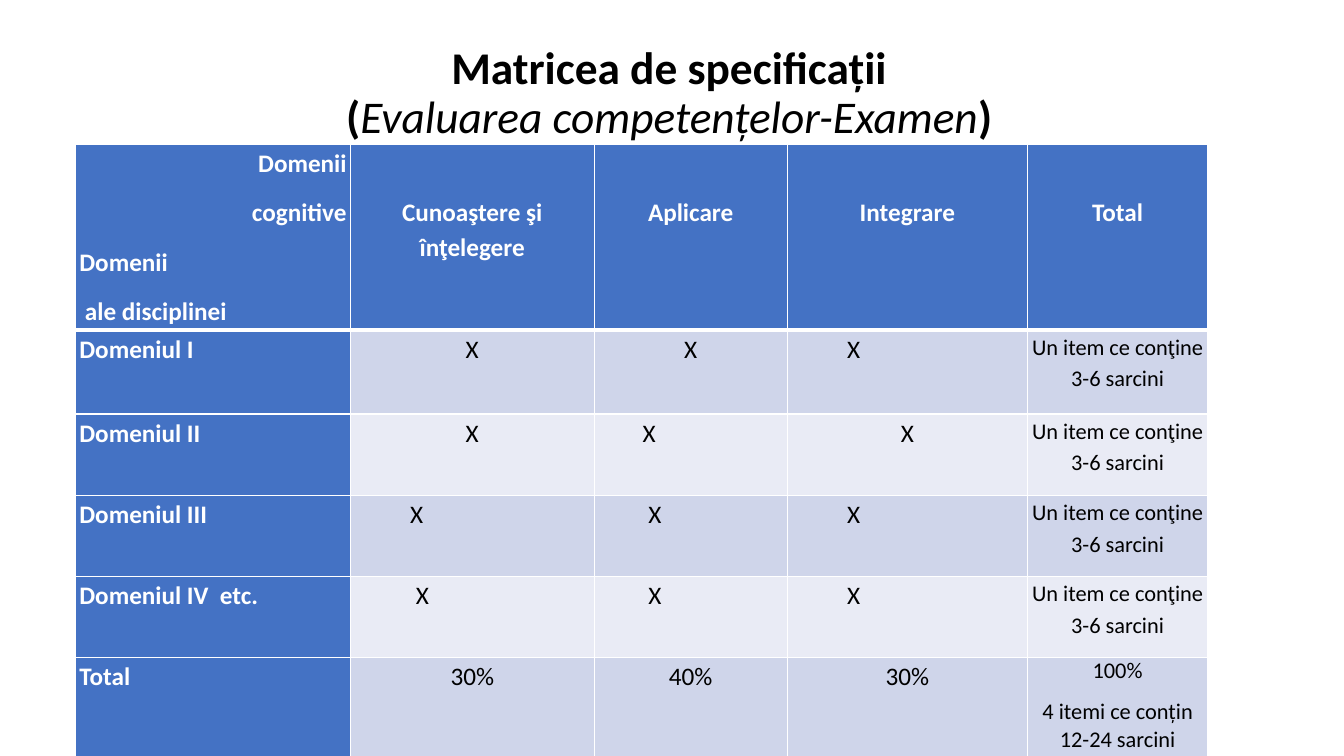
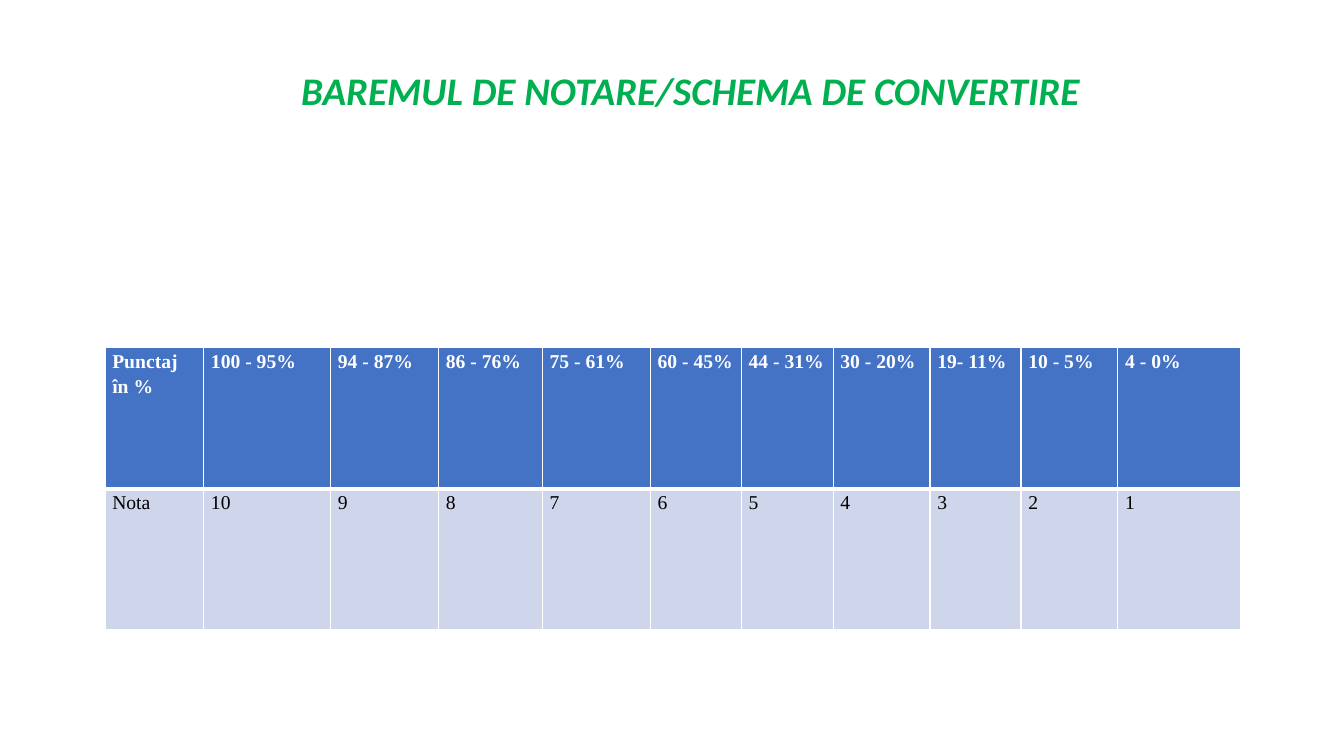
from pptx import Presentation
from pptx.dml.color import RGBColor
from pptx.enum.text import MSO_ANCHOR, MSO_AUTO_SIZE, PP_ALIGN as AL
from pptx.oxml.ns import qn
from pptx.util import Pt
from lxml.etree import SubElement

COLORS = {"head": "4472C4", "band": "CFD5EA", "light": "E9EBF5",
          "white": "FFFFFF", "black": "000000", "green": "00B050"}

prs = Presentation()
prs.slide_width, prs.slide_height = Pt(960), Pt(540)


def add_slide(box, size, color, lines):
    """Add a slide with a centred title; each run is (text, bold, italic)."""
    s = prs.slides.add_slide(prs.slide_layouts[5])
    sp = s.shapes.title
    sp.left, sp.top, sp.width, sp.height = map(Pt, box)
    tf = sp.text_frame
    tf.word_wrap = True
    tf.auto_size = MSO_AUTO_SIZE.NONE
    tf.vertical_anchor = MSO_ANCHOR.MIDDLE
    tf.margin_top = tf.margin_bottom = 0
    p = tf.paragraphs[0]
    p.alignment, p.line_spacing = AL.CENTER, 0.9
    for i, line in enumerate(lines):
        if i:
            p.add_line_break()
        for text, bold, italic in line:
            r = p.add_run()
            r.text = text
            r.font.name, r.font.size = "Calibri", Pt(size)
            r.font.bold, r.font.italic = bold, italic
            r.font.color.rgb = RGBColor.from_string(COLORS[color])
    return s


def add_grid(s, left, top, widths, heights, rows, font, margin, after):
    """Add a table; a cell is (paragraphs, size, spacing, top margin),
    a paragraph is (text, alignment, indent)."""
    table = s.shapes.add_table(len(heights), len(widths), Pt(left), Pt(top),
                               Pt(sum(widths)), Pt(sum(heights))).table
    table.horz_banding = False
    for col, width in zip(table.columns, widths):
        col.width = Pt(width)
    for i, height in enumerate(heights):
        table.rows[i].height = Pt(height)
        for j, (paras, size, spacing, above) in enumerate(rows[i]):
            cell = table.cell(i, j)
            # White borders, thicker under the header row
            for side in ("lnL", "lnR", "lnT", "lnB"):
                thick = (i, side) in ((0, "lnB"), (1, "lnT"))
                ln = SubElement(cell._tc.get_or_add_tcPr(), qn(f"a:{side}"),
                                w=str(Pt(3 if thick else 1)))
                fill = SubElement(ln, qn("a:solidFill"))
                SubElement(fill, qn("a:srgbClr"), val=COLORS["white"])
            # The header row is blue, and so is a first column in bold
            head = i == 0 or (j == 0 and len(heights) > 2)
            shade = "head" if head else "band" if i % 2 else "light"
            cell.fill.solid()
            cell.fill.fore_color.rgb = RGBColor.from_string(COLORS[shade])
            cell.margin_left = cell.margin_right = Pt(margin)
            cell.margin_top, cell.margin_bottom = Pt(above), 0
            tf = cell.text_frame
            for k, (text, align, indent) in enumerate(paras):
                p = tf.add_paragraph() if k else tf.paragraphs[0]
                p.alignment, p.line_spacing = align, spacing
                p.space_after = Pt(after)
                if indent:
                    p._p.get_or_add_pPr().set("marL", str(Pt(indent)))
                r = p.add_run()
                r.text = text
                r.font.name, r.font.size, r.font.bold = font, Pt(size), head
                r.font.color.rgb = RGBColor.from_string(
                    COLORS["white" if head else "black"])


# Slide 1: specification matrix
s = add_slide((64, 30, 828, 75), 32.4, "black", [
    [("Matricea de specificații", True, False)],
    [("(", True, False), ("Evaluarea competențelor-Examen", False, True),
     (")", True, False)]])

corner = [("Domenii", AL.RIGHT, 0), ("cognitive", AL.RIGHT, 0),
          ("Domenii", AL.LEFT, 0), ("ale disciplinei", AL.LEFT, 4)]
rows = [[(corner, 18, 1.15, 0)]]
for text in ("Cunoaştere şi înţelegere", "Aplicare", "Integrare", "Total"):
    rows[0].append(([(text, AL.CENTER, 0)], 18, 1.15, 35))

# Indent of each X; 0 means centred
marks = [("Domeniul I", 0, 0, 40), ("Domeniul II", 0, 32, 0),
         ("Domeniul III", 40, 36, 40), ("Domeniul IV  etc.", 44, 36, 40)]
for name, *indents in marks:
    row = [([(name, AL.LEFT, 0)], 18, 1.15, 0)]
    for indent in indents:
        align = AL.LEFT if indent else AL.CENTER
        row.append(([("X", align, indent)], 18, 1.15, 0))
    row.append(([("Un item ce conţine 3-6 sarcini", AL.CENTER, 0)],
                16, 1.15, 0))
    rows.append(row)

rows.append([([("Total", AL.LEFT, 0)], 18, 1.15, 0)])
for share in ("30%", "40%", "30%"):
    rows[-1].append(([(share, AL.CENTER, 0)], 18, 1.15, 0))
rows[-1].append(([("100%", AL.CENTER, 0),
                  ("4 itemi ce conțin 12-24 sarcini", AL.CENTER, 0)],
                 16, 1, 0))
add_grid(s, 54, 102.8, [196.3, 174.1, 138, 171.5, 128.9],
         [132.8, 60.2, 57.9, 57.9, 57.9, 85], rows, "Calibri", 2.7, 10)

# Slide 2: conversion of scores into marks
s = add_slide((81, 19, 824, 95), 27.9, "green",
              [[("BAREMUL DE NOTARE/SCHEMA DE CONVERTIRE", True, True)]])
scores = ["Punctaj în %", "100 - 95%", "94 - 87%", "86 - 76%", "75 - 61%",
          "60 - 45%", "44 - 31%", "30 - 20%", "19- 11%", "10 - 5%", "4 - 0%"]
grades = ["Nota"] + [str(n) for n in range(10, 0, -1)]
rows = [[([(text, AL.LEFT, 0)], 14, 1.15, 0) for text in line]
        for line in (scores, grades)]
add_grid(s, 75, 248.4,
         [70.5, 90.7, 77.1, 74.2, 77.1, 65, 65.6, 69.2, 65, 69.2, 88],
         [100.8, 100.8], rows, "Times New Roman", 5.2, 0)

prs.save("out.pptx")
